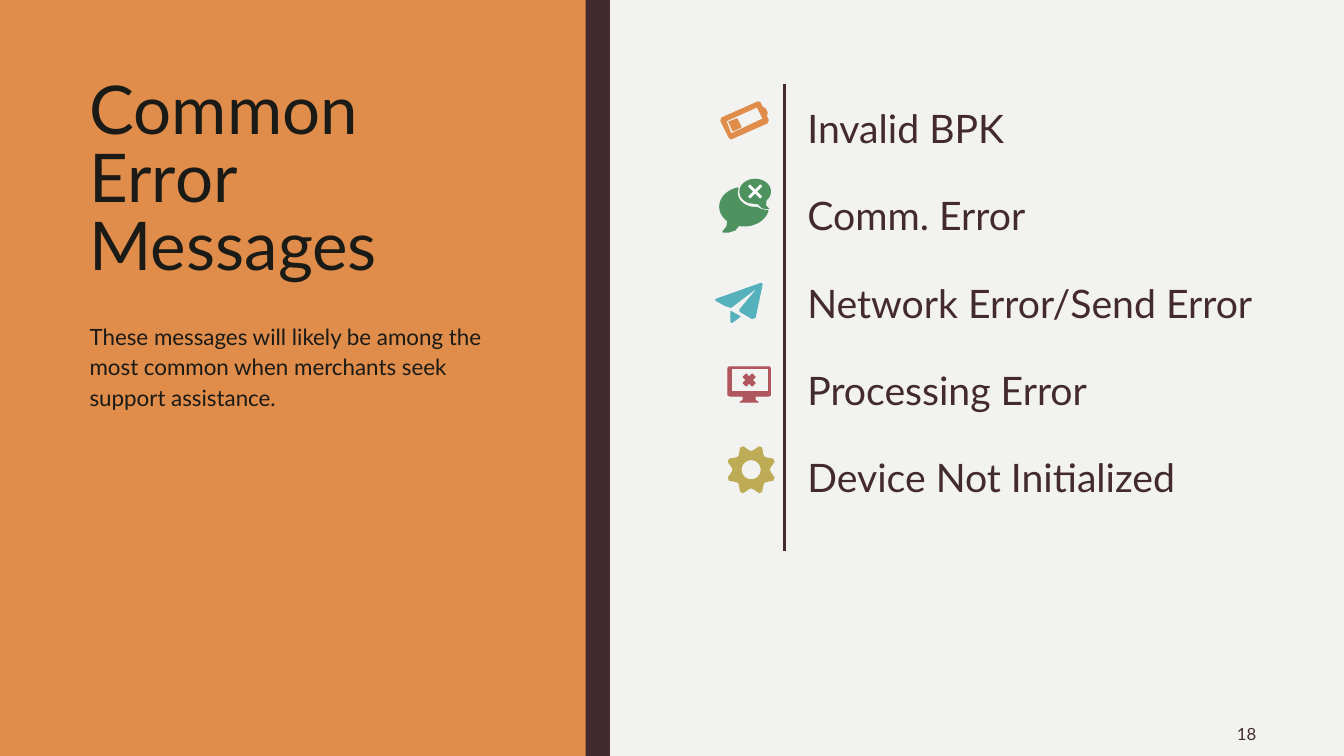
from math import cos, radians, sin

from lxml import etree
from pptx import Presentation
from pptx.dml.color import RGBColor
from pptx.enum.shapes import MSO_CONNECTOR, MSO_SHAPE
from pptx.enum.text import MSO_ANCHOR, PP_ALIGN
from pptx.oxml.ns import qn
from pptx.util import Pt

PX = 9144
W, H = 1333, 750
RECT = MSO_SHAPE.RECTANGLE
STRAIGHT = MSO_CONNECTOR.STRAIGHT
TOP, MIDDLE = MSO_ANCHOR.TOP, MSO_ANCHOR.MIDDLE
LEFT, RIGHT = PP_ALIGN.LEFT, PP_ALIGN.RIGHT
FONT = "Lato"
COLORS = {
    "page": "F2F2F0", "plum": "432A30", "orange": "E08C4A", "ink": "1A1A16",
    "green": "4D925F", "teal": "55B1BC", "red": "B0565D", "gold": "BDAB56",
    "white": "FFFFFF",
}
ERRORS = ["Invalid BPK", "Comm. Error", "Network Error/Send Error",
          "Processing Error", "Device Not Initialized"]


def px(n):
    """Turn px into EMU."""
    return round(n * PX)


def rgb(name):
    """Look up a named colour."""
    return RGBColor.from_string(COLORS[name])


def arc(cx, cy, rx, ry, start=0, end=360, steps=24):
    """Return points along an elliptical arc, in degrees."""
    angles = [radians(start + (end - start) * i / steps) for i in range(steps + 1)]
    return [(cx + rx * cos(a), cy + ry * sin(a)) for a in angles]


def cross(cx, cy, r, w):
    """Return the outline of a diagonal cross."""
    points, arm = [], [(0, -w), (r - w, -r), (r, w - r)]
    for _ in range(4):
        points += [(cx + x, cy + y) for x, y in arm]
        arm = [(-y, x) for x, y in arm]
    return points


def gear(cx, cy, teeth=8):
    """Return the outline of a gear with rounded notches."""
    notch = [(-19, 24), (-13, 21), (-7, 19), (0, 18), (7, 19), (13, 21), (19, 24)]
    polar = [(radians(360 / teeth * i + a), r) for i in range(teeth) for a, r in notch]
    return [(cx + r * cos(a), cy + r * sin(a)) for a, r in polar]


BATTERY = [
    [(45, 15), (47, 19), (46, 22), (10, 38), (8, 36), (0, 20), (1, 17),
     (37, 1), (39, 2), (41, 6), (44, 8), (46, 12)],
    [(40, 14), (36, 6), (5, 20), (10, 33), (42, 18)],
    [(20, 26), (12, 30), (8, 21), (16, 18)],
]
CHAT = [
    arc(35, 12, 15, 12, 115, 405) + [(45, 26), (48, 29), (42, 28), (38, 24)],
    arc(24, 27, 24, 19, 13, 100) + [(19, 45), (15, 50), (9, 52), (3, 52), (7, 47), (8, 42)]
    + arc(24, 27, 24, 19, 135, 255) + arc(35, 13, 18, 15, 180, 85) + [(41, 30)],
]
PLANE = [
    [(46, 1), (1, 17), (1, 18), (10, 23), (16, 25), (45, 3), (25, 27),
     (25, 29), (37, 36), (40, 35), (47, 2)],
    [(16, 39), (17, 40), (25, 34), (16, 29)],
]
MONITOR = [
    [(0, 1), (1, 0), (41, 0), (42, 1), (42, 28), (40, 29), (27, 29), (27, 33),
     (30, 35), (12, 35), (15, 33), (15, 29), (2, 29), (0, 28)],
    [(3, 2), (3, 24), (40, 24), (40, 2)],
    cross(21, 13, 6, 3),
]
GEAR = [gear(23, 23), arc(23, 23, 10, 10)]


def add_text(s, box, lines, size, color, spacing=1.0, before=0, after=0,
             align=LEFT, anchor=TOP):
    """Place paragraphs of one style in a box."""
    tf = s.shapes.add_textbox(*map(px, box)).text_frame
    tf.word_wrap = True
    tf.vertical_anchor = anchor
    for i, line in enumerate(lines):
        p = tf.paragraphs[0] if i == 0 else tf.add_paragraph()
        p.text = line
        p.alignment = align
        p.line_spacing = spacing
        p.space_before, p.space_after = Pt(before), Pt(after)
        p.font.name, p.font.size = FONT, Pt(size)
        p.font.color.rgb = rgb(color)


def add_band(s, box, color):
    """Place a plain filled rectangle."""
    sp = s.shapes.add_shape(RECT, *map(px, box))
    sp.shadow.inherit = False
    sp.fill.solid()
    sp.fill.fore_color.rgb = rgb(color)
    sp.line.fill.background()


def add_icon(s, x, y, outlines, color, outline_width=0.75):
    """Draw closed outlines as one shape, relative to a corner."""
    builder = None
    for outline in outlines:
        start, *rest = [(px(x + dx), px(y + dy)) for dx, dy in outline]
        if builder is None:
            builder = s.shapes.build_freeform(*start)
        else:
            builder.move_to(*start)
        builder.add_line_segments(rest, close=True)
    sp = builder.convert_to_shape()
    sp.shadow.inherit = False
    sp.fill.solid()
    sp.fill.fore_color.rgb = rgb(color)
    if outline_width:
        sp.line.color.rgb = rgb(color)
        sp.line.width = Pt(outline_width)
    else:
        sp.line.fill.background()


def add_rule(s, x, top, bottom):
    """Draw the upright line between icons and messages."""
    rule = s.shapes.add_connector(STRAIGHT, px(x), px(top), px(x), px(bottom))
    rule.line.color.rgb = rgb("plum")
    rule.line.width = Pt(2.25)
    etree.SubElement(rule._element.spPr, qn("a:effectLst"))


def title_panel(s, x, y, w, h):
    """Build the orange panel with title and explanation."""
    add_band(s, (x + w - 1, y, 25, h), "plum")
    add_band(s, (x, y, w, h), "orange")
    add_text(s, (x + 79, y + 75, 422, 236), ["Common Error Messages"], 48, "ink",
             spacing=0.84)
    add_text(s, (x + 79, y + 312, 422, 329),
             ["These messages will likely be among the most common when "
              "merchants seek support assistance."],
             16, "ink", spacing=1.13, after=15)


def error_list(s, x, y, w, h):
    """Build the icons, the upright line and the error messages."""
    add_text(s, (x + 82, y, w - 82, h), ERRORS, 28, "plum",
             spacing=1.5, before=10, after=2)
    add_icon(s, x + 6, y + 25, BATTERY, "orange")
    add_rule(s, x + 69, y + 8, y + 472)
    add_icon(s, x + 5, y + 103, CHAT, "green", 1)
    add_icon(s, x + 5, y + 103, [cross(35, 12, 7, 2)], "white", 0)
    add_icon(s, x, y + 205, PLANE, "teal")
    add_icon(s, x + 13, y + 289, MONITOR, "red")
    add_icon(s, x + 13, y + 368, GEAR, "gold")


def main():
    """Build the slide and save it."""
    prs = Presentation()
    prs.slide_width, prs.slide_height = px(W), px(H)
    s = prs.slides.add_slide(prs.slide_layouts[6])
    s.background.fill.solid()
    s.background.fill.fore_color.rgb = rgb("page")
    title_panel(s, 0, 0, 581, H)
    error_list(s, 709, 75, 545, 566)
    add_text(s, (1081, 706, 175, 44), ["18"], 12, "plum", align=RIGHT, anchor=MIDDLE)
    prs.save("out.pptx")


if __name__ == "__main__":
    main()
